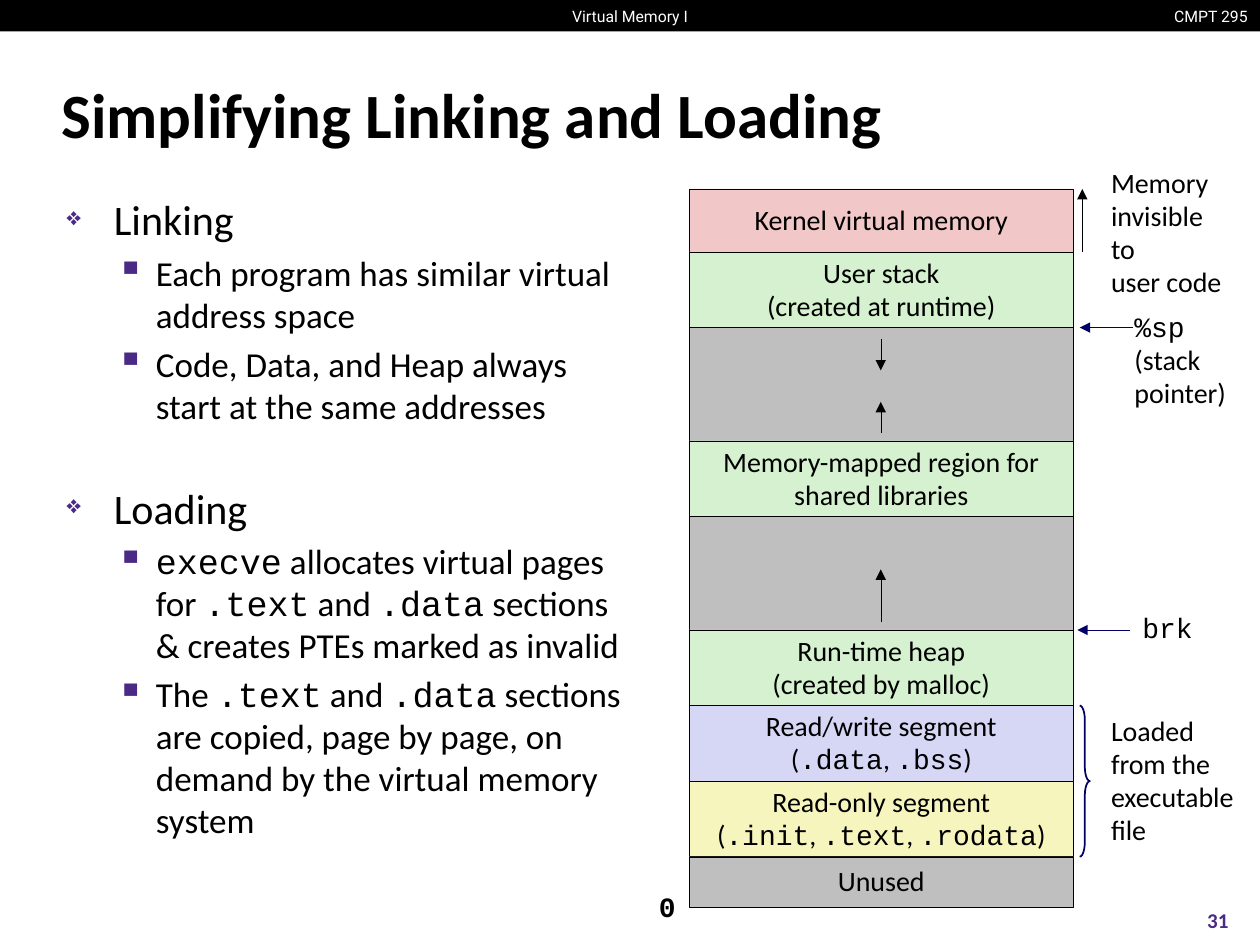
from dataclasses import dataclass
from typing import Optional

from lxml import etree
from pptx import Presentation
from pptx import util as u
from pptx.dml.color import RGBColor
from pptx.enum import shapes, text
from pptx.oxml.ns import qn

Pt = u.Pt
ALIGN = text.PP_ALIGN
MIDDLE, TOP = text.MSO_ANCHOR.MIDDLE, text.MSO_ANCHOR.TOP


@dataclass(frozen=True)
class Theme:
    sans: str = "Calibri"
    mono: str = "Courier New"
    header: str = "Roboto"
    black: str = "000000"
    white: str = "FFFFFF"
    purple: str = "4B2A85"
    navy: str = "000066"
    pink: str = "F1C7C7"
    green: str = "D5F1CF"
    gray: str = "BFBFBF"
    blue: str = "D6D6F5"
    yellow: str = "F6F5BD"
    title_size: float = 36
    topic_size: float = 24
    point_size: float = 20
    label_size: float = 16
    number_size: float = 12
    header_size: float = 9
    hairline: float = 0.25
    brace_line: float = 1


THEME = Theme()


@dataclass(frozen=True)
class Style:
    size: float = THEME.label_size
    font: str = THEME.sans
    color: str = THEME.black
    bold: bool = False
    align: ALIGN = ALIGN.LEFT
    spacing: float = 0.98


@dataclass(frozen=True)
class Label:
    """Text in a box; backticks enclose code, newlines part paragraphs."""
    words: str
    left: float
    top: float
    width: float
    height: float
    style: Style = Style()
    anchor: text.MSO_ANCHOR = MIDDLE
    right_inset: float = 0
    wrap: bool = True


@dataclass(frozen=True)
class Region:
    words: str
    height: float
    fill: str


@dataclass(frozen=True)
class Arrow:
    x1: float
    y1: float
    x2: float
    y2: float
    color: str = THEME.black


@dataclass(frozen=True)
class Level:
    bullet: str
    bullet_percent: int
    indent: float
    hanging: float
    style: Style


@dataclass(frozen=True)
class Bullet:
    level: Level
    words: str
    before: Optional[float] = None


TOPIC = Level("❖", 60, 27, 27, Style(THEME.topic_size, spacing=1))
POINT = Level("▪", 110, 51, 22.5, Style(THEME.point_size, spacing=1))
OUTLINE = [
    Bullet(TOPIC, "Linking"),
    Bullet(POINT, "Each program has similar virtual address space"),
    Bullet(POINT, "Code, Data, and Heap always start at the same addresses"),
    Bullet(TOPIC, "Loading", before=32),
    Bullet(POINT, "`execve` allocates virtual pages for `.text` and `.data` "
                  "sections & creates PTEs marked as invalid"),
    Bullet(POINT, "The `.text` and `.data` sections are copied, page by page, "
                  "on demand by the virtual memory system"),
]

MAP_LEFT, MAP_TOP, MAP_WIDTH = 393.8, 108, 219.6
REGIONS = [
    Region("Kernel virtual memory", 36, THEME.pink),
    Region("User stack\n(created at runtime)", 43.2, THEME.green),
    Region("", 64.8, THEME.gray),
    Region("Memory-mapped region for\nshared libraries", 43.2, THEME.green),
    Region("", 64.8, THEME.gray),
    Region("Run-time heap\n(created by malloc)", 43.2, THEME.green),
    Region("Read/write segment\n(`.data`, `.bss`)", 43.2, THEME.blue),
    Region("Read-only segment\n(`.init`, `.text`, `.rodata`)", 43.2, THEME.yellow),
    Region("Unused", 28.8, THEME.gray),
]

GROWTH_X = 503.3
ARROWS = [
    Arrow(GROWTH_X, 193.7, GROWTH_X, 211.7),
    Arrow(GROWTH_X, 247.7, GROWTH_X, 229.7),
    Arrow(GROWTH_X, 355.7, GROWTH_X, 325.4),
    Arrow(618.5, 144, 618.5, 108),
    Arrow(647.3, 187.2, 617, 187.2, THEME.navy),
    Arrow(645.8, 360, 615.6, 360, THEME.navy),
]

HEADER = Style(THEME.header_size, THEME.header, THEME.white, spacing=1)
HEADER_CENTER = Style(THEME.header_size, THEME.header, THEME.white,
                      align=ALIGN.CENTER, spacing=1)
HEADER_RIGHT = Style(THEME.header_size, THEME.header, THEME.white,
                     align=ALIGN.RIGHT, spacing=1)
TITLE = Style(THEME.title_size, bold=True, spacing=1)
NUMBER = Style(THEME.number_size, color=THEME.purple, bold=True,
               align=ALIGN.CENTER, spacing=1)
LABELS = [
    Label("CMPT 295", 661.7, 0, 58.3, 18, HEADER_RIGHT, right_inset=7.2, wrap=False),
    Label("Virtual Memory I", 318.2, 0, 83.6, 18, HEADER_CENTER, right_inset=7.2, wrap=False),
    Label("Simplifying Linking and Loading", 28, 34.6, 661.7, 59.8, TITLE),
    Label("31", 671.8, 511.2, 48.2, 28.8, NUMBER, right_inset=7.2),
    Label("0", 369.4, 504, 23.8, 28.8, Style(font=THEME.mono, bold=True)),
    Label("`%sp`\n(stack\npointer)", 641.2, 174.2, 68.4, 63.4, anchor=TOP),
    Label("Memory\ninvisible to\nuser code", 627.8, 92.2, 82.8, 64.1,
          anchor=TOP, right_inset=10),
    Label("`brk`", 645.8, 346.3, 43.2, 25.9, anchor=TOP),
    Label("Loaded\nfrom the\nexecutable\nfile", 627.8, 403.2, 82.8, 86.4),
]


def rgb(value: str) -> RGBColor:
    return RGBColor.from_string(value)


def write(paragraph, words: str, style: Style) -> None:
    paragraph.alignment = style.align
    paragraph.line_spacing = style.spacing
    for index, part in enumerate(words.split("`")):
        if part:
            run = paragraph.add_run()
            run.text = part
            run.font.name = THEME.mono if index % 2 else style.font
            run.font.size = Pt(style.size)
            run.font.bold = style.bold
            run.font.color.rgb = rgb(style.color)


def fill_frame(frame, words: str, style: Style) -> None:
    for index, line in enumerate(words.split("\n")):
        write(frame.add_paragraph() if index else frame.paragraphs[0], line, style)


def add_label(slide, label: Label) -> None:
    box = slide.shapes.add_textbox(Pt(label.left), Pt(label.top), Pt(label.width), Pt(label.height))
    frame = box.text_frame
    frame.word_wrap = label.wrap
    frame.vertical_anchor = label.anchor
    frame.margin_right = Pt(label.right_inset)
    if label.anchor == MIDDLE:
        frame.margin_top = frame.margin_bottom = 0
    fill_frame(frame, label.words, label.style)


def add_block(slide, kind, left: float, top: float, width: float, height: float,
              fill: Optional[str], line: Optional[str], weight: float = THEME.hairline):
    """Add a preset shape; None leaves out its fill or line."""
    block = slide.shapes.add_shape(kind, Pt(left), Pt(top), Pt(width), Pt(height))
    block.shadow.inherit = False
    if fill:
        block.fill.solid()
        block.fill.fore_color.rgb = rgb(fill)
    else:
        block.fill.background()
    if line:
        block.line.color.rgb = rgb(line)
        block.line.width = Pt(weight)
    else:
        block.line.fill.background()
    return block


def add_memory_map(slide) -> None:
    top = MAP_TOP
    for region in REGIONS:
        block = add_block(slide, shapes.MSO_SHAPE.RECTANGLE, MAP_LEFT, top, MAP_WIDTH,
                          region.height, region.fill, THEME.black)
        frame = block.text_frame
        frame.margin_left = frame.margin_right = frame.margin_top = frame.margin_bottom = 0
        frame.vertical_anchor = MIDDLE
        frame.word_wrap = False
        if region.words:
            fill_frame(frame, region.words, Style(align=ALIGN.CENTER))
        top += region.height


def add_arrow(slide, arrow: Arrow) -> None:
    line = slide.shapes.add_connector(shapes.MSO_CONNECTOR.STRAIGHT, Pt(arrow.x1), Pt(arrow.y1),
                                      Pt(arrow.x2), Pt(arrow.y2))
    line.line.color.rgb = rgb(arrow.color)
    line.line.width = Pt(THEME.hairline)
    etree.SubElement(line.line._get_or_add_ln(), qn("a:tailEnd"), type="triangle")
    etree.SubElement(line._element.spPr, qn("a:effectLst"))


def add_outline(slide) -> None:
    frame = slide.shapes.add_textbox(Pt(31), Pt(107.3), Pt(338.4), Pt(391.7)).text_frame
    frame.word_wrap = True
    for index, bullet in enumerate(OUTLINE):
        level = bullet.level
        paragraph = frame.add_paragraph() if index else frame.paragraphs[0]
        write(paragraph, bullet.words, level.style)
        paragraph.space_before = Pt(bullet.before or level.style.size * 0.2)
        props = paragraph._p.get_or_add_pPr()
        props.set("marL", str(Pt(level.indent)))
        props.set("indent", str(-Pt(level.hanging)))
        color = etree.SubElement(props, qn("a:buClr"))
        etree.SubElement(color, qn("a:srgbClr"), val=THEME.purple)
        etree.SubElement(props, qn("a:buSzPct"), val=str(level.bullet_percent * 1000))
        etree.SubElement(props, qn("a:buChar"), char=level.bullet)


def main() -> None:
    deck = Presentation()
    deck.slide_width, deck.slide_height = Pt(720), Pt(540)
    slide = deck.slides.add_slide(deck.slide_layouts[6])
    add_block(slide, shapes.MSO_SHAPE.RECTANGLE, 0, 0, 720, 18, THEME.black, None)
    add_outline(slide)
    add_memory_map(slide)
    brace = add_block(slide, shapes.MSO_SHAPE.RIGHT_BRACE, 617, 403.2, 5.8, 86.4,
                      None, THEME.navy, THEME.brace_line)
    brace.adjustments[0] = 1.42
    for arrow in ARROWS:
        add_arrow(slide, arrow)
    for label in LABELS:
        add_label(slide, label)
    deck.save("out.pptx")


if __name__ == "__main__":
    main()
